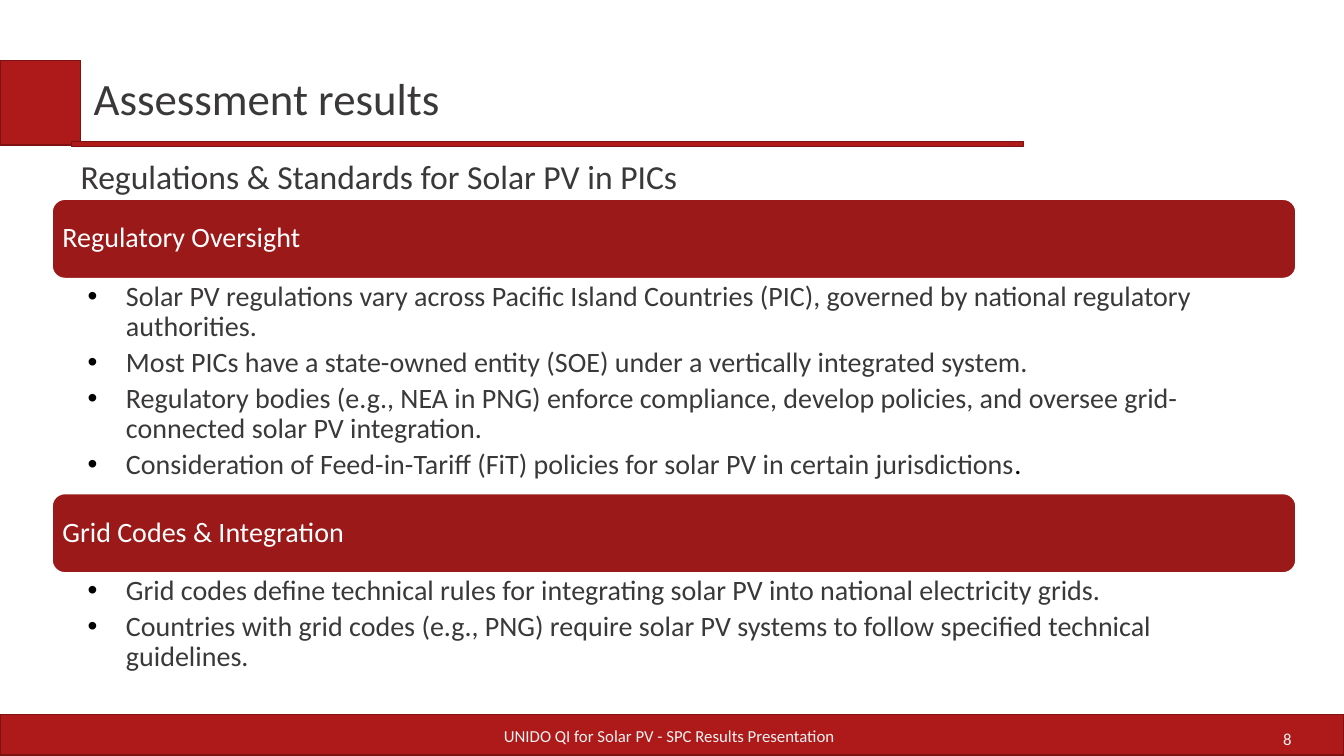
"""Build the assessment results slide on solar PV regulations and grid codes."""
from lxml import etree
from pptx import Presentation
from pptx import util as u
from pptx.dml.color import RGBColor
from pptx.enum import shapes, text
from pptx.oxml.ns import qn

TITLE = "Assessment results"
SUBTITLE = "Regulations & Standards for Solar PV in PICs"
FOOTER = "UNIDO QI for Solar PV - SPC Results Presentation"
PAGE = "8"
SECTIONS = [
    ("Regulatory Oversight", 2.12, [
        [("Solar PV regulations vary across Pacific Island Countries (PIC), governed by "
          "national regulatory authorities.", "ink")],
        [("Most PICs have a state-owned entity (SOE) under a vertically integrated system.", "ink")],
        [("Regulatory bodies (e.g., NEA in PNG) enforce compliance, develop policies, and "
          "oversee grid-connected solar PV integration.", "ink")],
        [("Consideration of Feed-in-Tariff (FiT) policies for solar PV in certain jurisdictions", "ink"),
         (".", "black")],
    ]),
    ("Grid Codes & Integration", 1.06, [
        [("Grid codes define technical rules for integrating solar PV into national "
          "electricity grids.", "ink")],
        [("Countries with grid codes (e.g., PNG) require solar PV systems to follow "
          "specified technical guidelines.", "ink")],
    ]),
]
THEME = {
    "font": "Calibri",
    "colors": {"red": "AE1919", "edge": "7E1212", "header": "9B1919", "ink": "3A3838",
               "black": "000000", "white": "FFFFFF", "pale": "F2F2F2"},
    "sizes": {"title": 32, "subtitle": 24, "body": 20, "footer": 12},
}
BANDS = [(0, 7.09, 13.33, 0.4), (0, 0.6, 0.8, 0.84), (0.71, 1.4, 9.44, 0.05)]
LEFT, WIDTH, FIRST_TOP, HEADER_HEIGHT = 0.51, 12.35, 1.97, 0.8
INDENT = 0.38
MIDDLE, TOP = text.MSO_ANCHOR.MIDDLE, text.MSO_ANCHOR.TOP


def color(name):
    return RGBColor.from_string(THEME["colors"][name])


def add_block(slide, kind, box, fill, edge, weight):
    block = slide.shapes.add_shape(kind, *map(u.Inches, box))
    block.shadow.inherit = False
    block.fill.solid()
    block.fill.fore_color.rgb = color(fill)
    block.line.color.rgb = color(edge)
    block.line.width = u.Pt(weight)
    return block


def set_frame(frame, insets, anchor):
    sides = ("margin_left", "margin_top", "margin_right", "margin_bottom")
    settings = dict(zip(sides, map(u.Inches, insets)), word_wrap=True, vertical_anchor=anchor)
    for name, value in settings.items():
        setattr(frame, name, value)


def add_bullet(paragraph):
    props = paragraph._p.get_or_add_pPr()
    props.set("marL", str(u.Inches(INDENT)))
    props.set("indent", str(-u.Inches(INDENT)))
    tint = etree.SubElement(props, qn("a:buClr"))
    etree.SubElement(tint, qn("a:srgbClr"), val=THEME["colors"]["black"])
    etree.SubElement(props, qn("a:buFont"), typeface="Arial")
    etree.SubElement(props, qn("a:buChar"), char="•")


def write(frame, paragraphs, size, align=text.PP_ALIGN.LEFT, spacing=1.0, bulleted=False):
    for position, runs in enumerate(paragraphs):
        paragraph = frame.add_paragraph() if position else frame.paragraphs[0]
        if bulleted:
            add_bullet(paragraph)
        paragraph.alignment = align
        paragraph.line_spacing = spacing
        if position:
            paragraph.space_before = u.Pt(4)
        for words, tint in runs:
            run = paragraph.add_run()
            run.text = words
            run.font.name = THEME["font"]
            run.font.size = u.Pt(THEME["sizes"][size])
            run.font.color.rgb = color(tint)


def add_text(slide, box, paragraphs, size, insets, anchor=MIDDLE, **layout):
    frame = slide.shapes.add_textbox(*map(u.Inches, box)).text_frame
    set_frame(frame, insets, anchor)
    write(frame, paragraphs, size, **layout)


def add_section(slide, top, heading, height, bullets):
    header = add_block(slide, shapes.MSO_SHAPE.ROUNDED_RECTANGLE,
                       (LEFT, top, WIDTH, HEADER_HEIGHT), "header", "white", 2)
    set_frame(header.text_frame, (0.07, 0.08, 0.07, 0.08), MIDDLE)
    write(header.text_frame, [[(heading, "white")]], "body", spacing=0.9)
    add_text(slide, (LEFT, top + HEADER_HEIGHT, WIDTH, height), bullets, "body",
             (0.36, 0.03, 0.16, 0.03), TOP, spacing=0.9, bulleted=True)
    return top + HEADER_HEIGHT + height


def main():
    deck = Presentation()
    deck.slide_width, deck.slide_height = u.Inches(13.33), u.Inches(7.5)
    slide = deck.slides.add_slide(deck.slide_layouts[6])
    for box in BANDS:
        add_block(slide, shapes.MSO_SHAPE.RECTANGLE, box, "red", "edge", 0.85)
    add_text(slide, (9.77, 7.13, 3.14, 0.4), [[(PAGE, "pale")]], "footer",
             (0.1, 0.05, 0.1, 0.05), align=text.PP_ALIGN.RIGHT)
    add_text(slide, (3.61, 7.1, 6.06, 0.4), [[(FOOTER, "pale")]], "footer",
             (0.1,) * 4, align=text.PP_ALIGN.CENTER)
    add_text(slide, (0.83, 0.64, 8.38, 0.72), [[(TITLE, "ink")]], "title",
             (0.1,) * 4, spacing=0.9)
    add_text(slide, (0.67, 1.42, 8.41, 0.72), [[(SUBTITLE, "ink")]], "subtitle",
             (0.13,) * 4, TOP)
    top = FIRST_TOP
    for heading, height, bullets in SECTIONS:
        top = add_section(slide, top, heading, height, bullets)
    deck.save("out.pptx")


if __name__ == "__main__":
    main()
